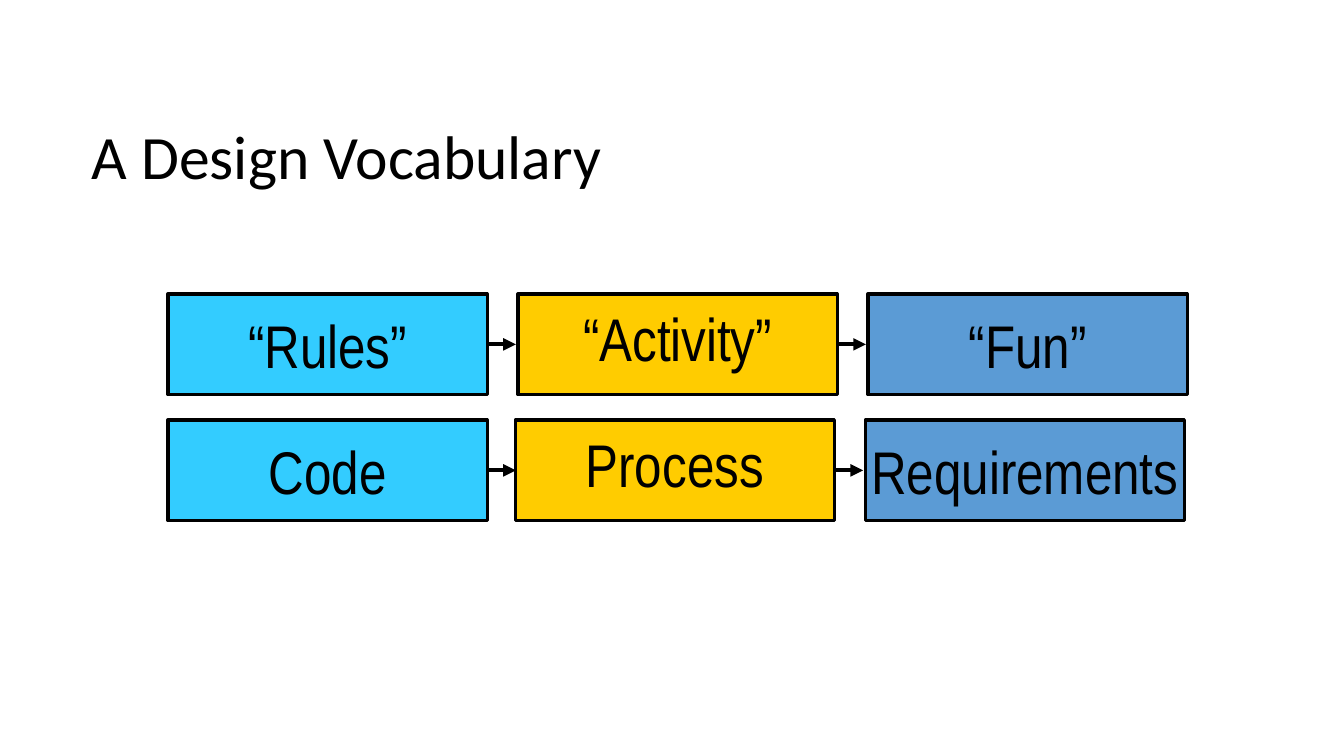
from lxml.etree import SubElement
from pptx import Presentation
from pptx.dml.color import RGBColor
from pptx.enum.shapes import MSO_CONNECTOR, MSO_SHAPE
from pptx.enum.text import MSO_ANCHOR, MSO_AUTO_SIZE, PP_ALIGN
from pptx.oxml.ns import qn
from pptx.util import Pt

COLORS = {"ink": "000000", "design": "33CCFF", "dynamics": "FFCC00", "goal": "5B9BD5"}
FRAME = {"margin_left": Pt(9.6), "margin_right": Pt(9.6),
         "margin_top": Pt(4.8), "margin_bottom": Pt(4.8),
         "auto_size": MSO_AUTO_SIZE.NONE}
TITLE_FONT = {"name": "Calibri", "size": Pt(44), "bold": False}
TERM_FONT = {"name": "Arial Narrow", "size": Pt(43)}

TERM_WIDTH, TERM_HEIGHT = 228, 72
ARROW_GAP, ARROW_LENGTH = 1, 19.5
STAGES = [("design", 1.0), ("dynamics", 0.8), ("goal", 1.0)]
ROWS = [
    (210, (120, 370, 620), ("“Rules”", "“Activity”", "“Fun”")),
    (300, (120, 368, 618), ("Code", "Process", "Requirements")),
]


def apply(target, values):
    for name, value in values.items():
        setattr(target, name, value)


class SlideBuilder:
    def __init__(self, slide):
        self.slide = slide

    def color(self, name):
        return RGBColor.from_string(COLORS[name])

    def label(self, shape, text, font, frame, paragraph):
        text_frame = shape.text_frame
        text_frame.text = text
        apply(text_frame, FRAME | frame)
        first = text_frame.paragraphs[0]
        apply(first, paragraph)
        apply(first.font, font)
        first.font.color.rgb = self.color("ink")

    def title(self, text, left, top, width, height):
        heading = self.slide.shapes.title
        apply(heading, {"left": Pt(left), "top": Pt(top),
                        "width": Pt(width), "height": Pt(height)})
        self.label(heading, text, TITLE_FONT,
                   {"vertical_anchor": MSO_ANCHOR.TOP, "word_wrap": True},
                   {"alignment": PP_ALIGN.LEFT, "line_spacing": 0.9})

    def term(self, text, left, top, fill, line_spacing):
        box = self.slide.shapes.add_shape(
            MSO_SHAPE.RECTANGLE, Pt(left), Pt(top), Pt(TERM_WIDTH), Pt(TERM_HEIGHT))
        box.shadow.inherit = False
        box.fill.solid()
        box.fill.fore_color.rgb = self.color(fill)
        box.line.color.rgb = self.color("ink")
        box.line.width = Pt(2.25)
        self.label(box, text, TERM_FONT,
                   {"vertical_anchor": MSO_ANCHOR.MIDDLE, "word_wrap": False},
                   {"alignment": PP_ALIGN.CENTER, "line_spacing": line_spacing})

    def arrow(self, start, y):
        arrow = self.slide.shapes.add_connector(
            MSO_CONNECTOR.STRAIGHT, Pt(start), Pt(y), Pt(start + ARROW_LENGTH), Pt(y))
        arrow.line.color.rgb = self.color("ink")
        arrow.line.width = Pt(3)
        properties = arrow.element.spPr
        SubElement(properties.find(qn("a:ln")), qn("a:tailEnd"), type="triangle")
        SubElement(properties, qn("a:effectLst"))


def main():
    deck = Presentation()
    deck.slide_width, deck.slide_height = Pt(960), Pt(540)
    builder = SlideBuilder(deck.slides.add_slide(deck.slide_layouts[5]))
    builder.title("A Design Vocabulary", 56, 85.5, 847.5, 114)
    for top, lefts, terms in ROWS:
        for left, term, (fill, line_spacing) in zip(lefts, terms, STAGES):
            builder.term(term, left, top, fill, line_spacing)
        for left in lefts[:-1]:
            builder.arrow(left + TERM_WIDTH + ARROW_GAP, top + TERM_HEIGHT / 2)
    deck.save("out.pptx")


if __name__ == "__main__":
    main()
